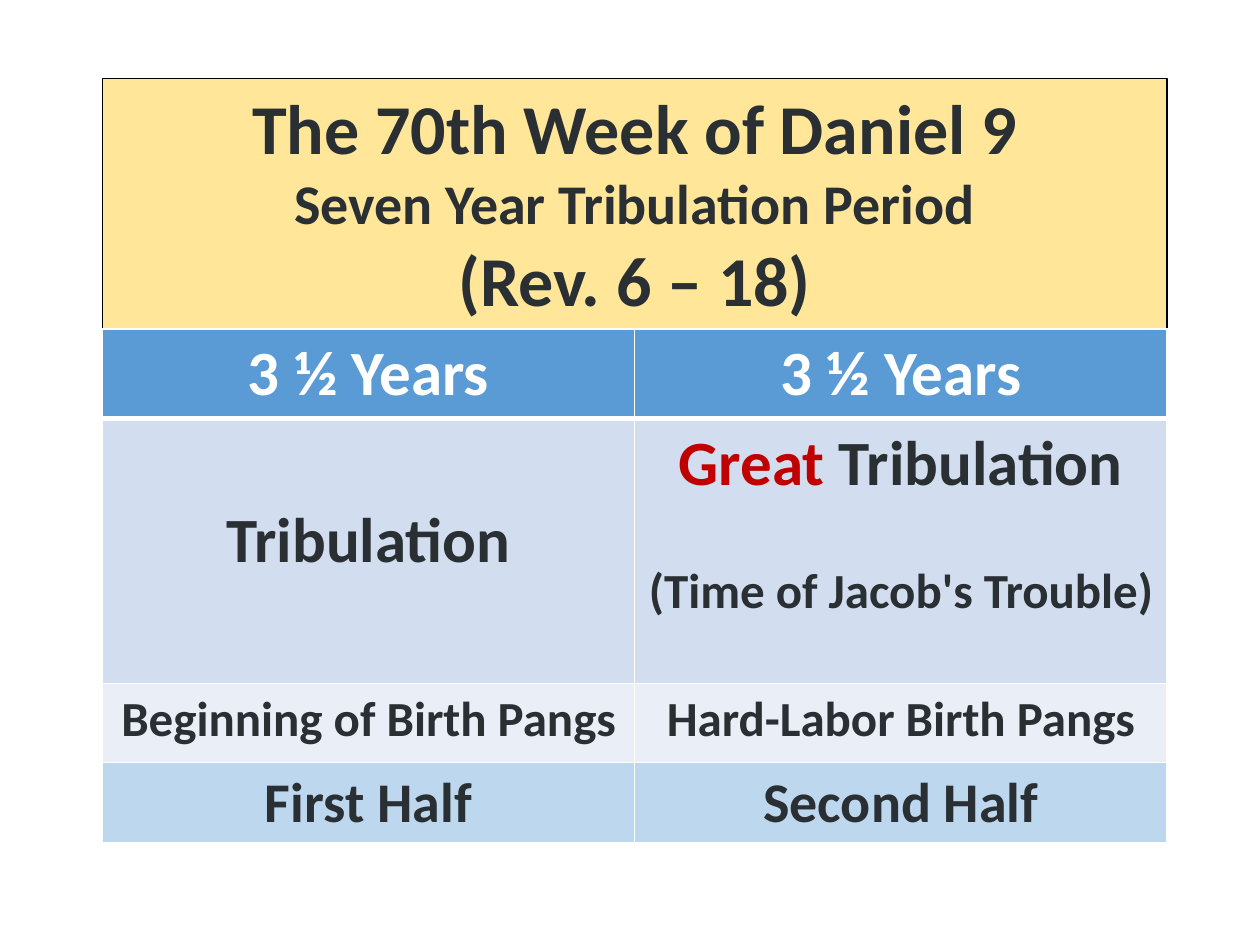
import pptx
import pptx.util
import pptx.dml.color
import pptx.enum.shapes
import pptx.enum.text
import pptx.oxml
import pptx.oxml.ns
from lxml import etree

Pt = pptx.util.Pt
RGBColor = pptx.dml.color.RGBColor
CENTER = pptx.enum.text.PP_ALIGN.CENTER

WHITE = RGBColor(0xFF, 0xFF, 0xFF)
BLACK = RGBColor(0x00, 0x00, 0x00)
INK = RGBColor(0x29, 0x2F, 0x33)
RED = RGBColor(0xC0, 0x00, 0x00)
GOLD = RGBColor(0xFF, 0xE6, 0x99)
BLUE = RGBColor(0x5B, 0x9B, 0xD5)
BAND_DARK = RGBColor(0xD2, 0xDE, 0xEF)
BAND_LIGHT = RGBColor(0xEA, 0xEF, 0xF7)
SKY = RGBColor(0xBD, 0xD7, 0xEE)

# Runs are (text, size, colour)
TITLE = [
    ("The 70th Week of Daniel 9", 40, INK),
    ("Seven Year Tribulation Period", 32, INK),
    ("(Rev. 6 – 18)", 40, INK),
]

# Rows are (height, fill, bottom border width, cells);
# a cell is (space above its text, paragraphs of runs)
PERIOD_ROWS = [
    (50.4, BLUE, 3, [
        (0, [[("3 ½ Years", 36, WHITE)]]),
        (0, [[("3 ½ Years", 36, WHITE)]]),
    ]),
    (151.4, BAND_DARK, 1, [
        (44, [[("Tribulation", 36, INK)]]),
        (0, [[("Great", 36, RED), (" Tribulation", 36, INK)],
             [("(Time of Jacob's Trouble)", 28, INK)]]),
    ]),
    (45.9, BAND_LIGHT, 1, [
        (0, [[("Beginning of Birth Pangs", 28, INK)]]),
        (0, [[("Hard-Labor Birth Pangs", 28, INK)]]),
    ]),
]
HALF_ROWS = [
    (46.8, SKY, 3, [
        (0, [[("First Half", 32, INK)]]),
        (0, [[("Second Half", 32, INK)]]),
    ]),
]

LEFT, TITLE_TOP, TITLE_HEIGHT = 58.5, 45, 143
COLUMN_WIDTH = 304.2
WIDTH = 2 * COLUMN_WIDTH
PERIOD_TOP, HALF_TOP = 188, 435.7
PARAGRAPH_GAP = 34
CELL_MARGIN = 3.6


def add_run(paragraph, text, size, color):
    run = paragraph.add_run()
    run.text = text
    run.font.name = "Calibri"
    run.font.size = Pt(size)
    run.font.bold = True
    run.font.color.rgb = color


def set_borders(cell, widths):
    """Draw white borders; widths maps a side (L, R, T, B) to points."""
    properties = cell._tc.get_or_add_tcPr()
    for index, (side, width) in enumerate(widths.items()):
        line = pptx.oxml.parse_xml(
            f'<a:ln{side} {pptx.oxml.ns.nsdecls("a")} w="{Pt(width)}">'
            f'<a:solidFill><a:srgbClr val="{WHITE}"/></a:solidFill></a:ln{side}>')
        properties.insert(index, line)


def add_title(slide):
    box = slide.shapes.add_shape(
        pptx.enum.shapes.MSO_SHAPE.RECTANGLE,
        Pt(LEFT), Pt(TITLE_TOP), Pt(WIDTH), Pt(TITLE_HEIGHT))
    box.shadow.inherit = False
    box.fill.solid()
    box.fill.fore_color.rgb = GOLD
    box.line.color.rgb = BLACK
    box.line.width = Pt(0.75)
    frame = box.text_frame
    frame.word_wrap = True
    frame.vertical_anchor = pptx.enum.text.MSO_ANCHOR.TOP
    paragraph = frame.paragraphs[0]
    paragraph.alignment = CENTER
    for index, run in enumerate(TITLE):
        if index:
            paragraph.add_line_break()
        add_run(paragraph, *run)


def fill_cell(cell, fill, space_above, paragraphs):
    cell.fill.solid()
    cell.fill.fore_color.rgb = fill
    cell.margin_top = Pt(CELL_MARGIN + space_above)
    frame = cell.text_frame
    for index, runs in enumerate(paragraphs):
        paragraph = frame.add_paragraph() if index else frame.paragraphs[0]
        paragraph.alignment = CENTER
        if index:
            paragraph.space_before = Pt(PARAGRAPH_GAP)
        for run in runs:
            add_run(paragraph, *run)


def add_table(slide, top, rows):
    height = sum(row[0] for row in rows)
    table = slide.shapes.add_table(
        len(rows), 2, Pt(LEFT), Pt(top), Pt(WIDTH), Pt(height)).table
    for column in table.columns:
        column.width = Pt(COLUMN_WIDTH)
    border_above = 1
    for row_index, (row_height, fill, border_below, cells) in enumerate(rows):
        table.rows[row_index].height = Pt(row_height)
        for column_index, (space_above, paragraphs) in enumerate(cells):
            cell = table.cell(row_index, column_index)
            fill_cell(cell, fill, space_above, paragraphs)
            set_borders(cell, {"L": 1, "R": 1, "T": border_above, "B": border_below})
        border_above = border_below


def main():
    presentation = pptx.Presentation()
    presentation.slide_width = Pt(720)
    presentation.slide_height = Pt(540)
    slide = presentation.slides.add_slide(presentation.slide_layouts[6])
    add_title(slide)
    add_table(slide, PERIOD_TOP, PERIOD_ROWS)
    add_table(slide, HALF_TOP, HALF_ROWS)
    presentation.save("out.pptx")


if __name__ == "__main__":
    main()
